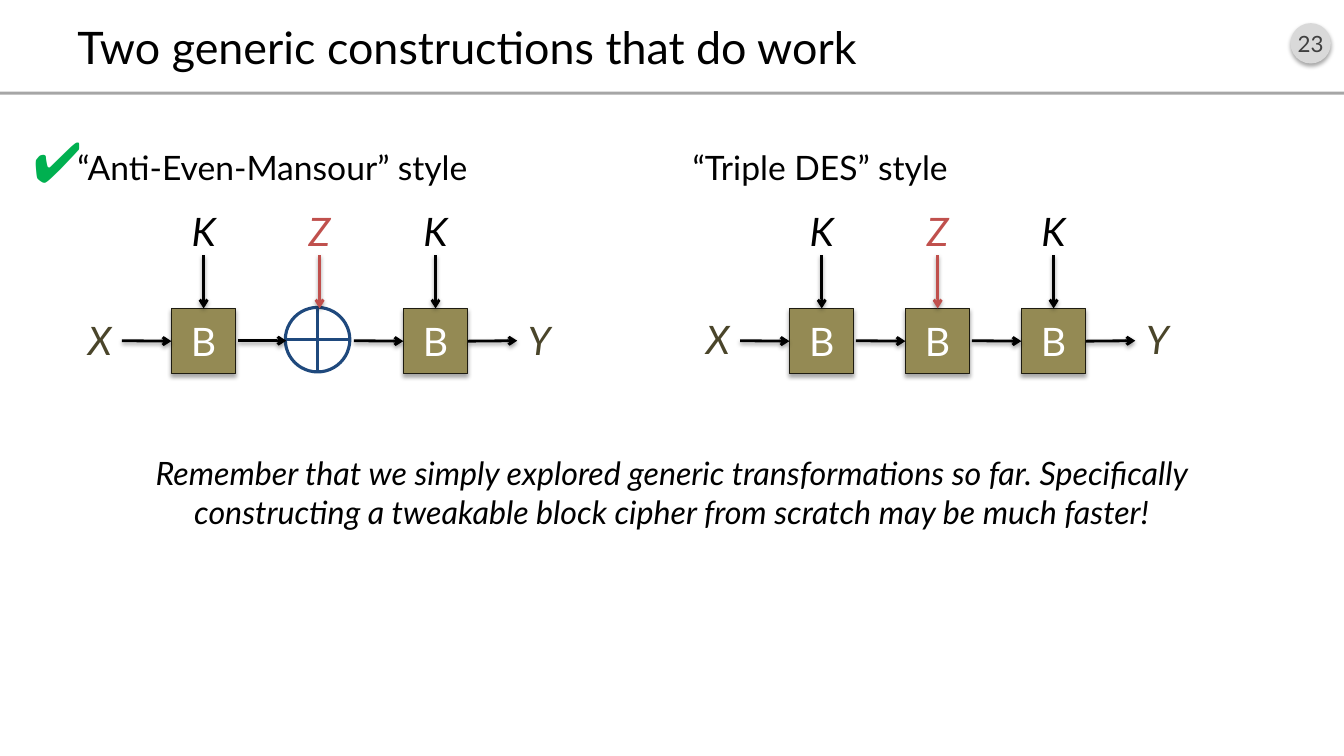
from lxml.etree import SubElement
from pptx import Presentation
from pptx.dml.color import RGBColor
from pptx.enum.shapes import MSO_CONNECTOR, MSO_SHAPE as SHAPE
from pptx.enum.text import MSO_ANCHOR as ANCHOR, MSO_AUTO_SIZE as AUTO, PP_ALIGN as ALIGN
from pptx.oxml.ns import qn
from pptx.util import Emu, Pt

PX = 9144  # 100 px to the inch
BLACK, WHITE, RED, OLIVE = "000000", "FFFFFF", "C0504D", "4A452A"
BLUE, GREEN, BOX_FILL, BOX_EDGE = "1F497D", "00B050", "948A54", "1E1C11"
TOP, LEFT, BOTTOM, RIGHT = range(4)


def px(value):
    return Emu(int(value * PX))


def color(value):
    return RGBColor.from_string(value)


def apply(target, values):
    for name, value in values.items():
        setattr(target, name, value)


class SlideBuilder:
    font = "Lato"

    def __init__(self, slide):
        self.slide = slide
        self.canvas = slide.shapes

    def start_group(self):
        self.canvas = self.slide.shapes.add_group_shape().shapes

    def end_group(self):
        self.canvas = self.slide.shapes

    def shadow(self, effects, alpha, distance):
        outer = SubElement(effects, qn("a:outerShdw"), blurRad=str(Pt(3.1)),
                           dist=str(Pt(distance)), dir="5400000", rotWithShape="0")
        tint = SubElement(outer, qn("a:srgbClr"), val=BLACK)
        SubElement(tint, qn("a:alpha"), val=str(alpha * 1000))

    def fill_text(self, shape, text, size, ink, italic=False, align=ALIGN.LEFT,
                  before=0, **frame_format):
        frame = shape.text_frame
        apply(frame, {"word_wrap": True, **frame_format})
        paragraph = frame.paragraphs[0]
        apply(paragraph, {"alignment": align, "space_before": Pt(before)})
        run = paragraph.add_run()
        run.text = text
        apply(run.font, {"name": self.font, "size": Pt(size), "italic": italic})
        run.font.color.rgb = color(ink)

    def text(self, left, top, width, height, text, size, ink=BLACK, **style):
        box = self.canvas.add_textbox(px(left), px(top), px(width), px(height))
        self.fill_text(box, text, size, ink, **style)

    def label(self, left, top, text, ink):
        self.text(left, top, 64, 47, text, 28, ink, italic=True, align=ALIGN.CENTER,
                  auto_size=AUTO.SHAPE_TO_FIT_TEXT, margin_left=0, margin_right=0,
                  margin_top=0, margin_bottom=0)

    def shape(self, kind, left, top, width, height, fill=None, edge=None,
              weight=0.75, shadow=False):
        shape = self.canvas.add_shape(kind, px(left), px(top), px(width), px(height))
        shape.shadow.inherit = False
        if fill:
            shape.fill.solid()
            shape.fill.fore_color.rgb = color(fill)
        else:
            shape.fill.background()
        if edge:
            shape.line.color.rgb = color(edge)
            shape.line.width = Pt(weight)
        else:
            shape.line.fill.background()
        if shadow:
            self.shadow(shape._element.spPr.find(qn("a:effectLst")), 35, 1.8)
        return shape

    def caption(self, shape, text, size, ink):
        self.fill_text(shape, text, size, ink, align=ALIGN.CENTER,
                       vertical_anchor=ANCHOR.MIDDLE, margin_left=0, margin_right=0)

    def line(self, start, end, ink=BLACK, weight=2, arrow=True, source=None, target=None):
        connector = self.canvas.add_connector(
            MSO_CONNECTOR.STRAIGHT, *(px(value) for value in (*start, *end)))
        if source:
            connector.begin_connect(*source)
        if target:
            connector.end_connect(*target)
        connector.line.color.rgb = color(ink)
        connector.line.width = Pt(weight)
        properties = connector._element.spPr
        effects = SubElement(properties, qn("a:effectLst"))
        if arrow:
            SubElement(properties.find(qn("a:ln")), qn("a:tailEnd"), type="arrow")
            self.shadow(effects, 38, 1.6)

    def cipher_box(self, left):
        box = self.shape(SHAPE.RECTANGLE, left, 306, 64, 65, BOX_FILL, BOX_EDGE, shadow=True)
        self.caption(box, "B", 28, WHITE)
        return box

    def xor(self, left, top=305, size=64):
        half = size // 2
        self.shape(SHAPE.OVAL, left, top, size, size, edge=BLUE, weight=2.25)
        self.line((left, top + half), (left + size, top + half), BLUE, 2.25, arrow=False)
        self.line((left + half, top), (left + half, top + size), BLUE, 2.25, arrow=False)

    def diagram(self, origin, label_top, kinds):
        """One chain X -> stage -> stage -> stage -> Y, each stage fed from above."""
        lane, reach, step = 338, 49, 115
        self.start_group()
        self.label(origin, label_top, "X", OLIVE)
        for index, (kind, key) in enumerate(zip(kinds, "KZK")):
            left = origin + 103 + index * step
            ink = RED if key == "Z" else BLACK
            box = self.cipher_box(left) if kind == "B" else self.xor(left - 2)
            self.label(left, 206, key, ink)
            self.line((left + 32, 253), (left + 32, 306), ink, target=box and (box, TOP))
            self.line((left - reach, lane), (left - 1, lane), target=box and (box, LEFT))
        end = left + 64
        self.line((end, lane), (end + reach, lane), source=(box, RIGHT))
        self.label(origin + 436, label_top, "Y", OLIVE)
        self.end_group()


def main():
    presentation = Presentation()
    apply(presentation, {"slide_width": px(1333), "slide_height": px(750)})
    builder = SlideBuilder(presentation.slides.add_slide(presentation.slide_layouts[6]))

    # Header: page number, rule and title
    badge = builder.shape(SHAPE.OVAL, 1280, 23, 40, 40, "D9D9D9", shadow=True)
    builder.caption(badge, "23", 16, "404040")
    builder.shape(SHAPE.RECTANGLE, 0, 91, 1333, 3, "A6A6A6")
    builder.text(67, 16, 1200, 60, "Two generic constructions that do work", 32,
                 vertical_anchor=ANCHOR.MIDDLE)

    # Two constructions, each with heading and diagram
    for heading_left, heading, origin, label_top, kinds in (
            (67, "“Anti-Even-Mansour” style", 67, 314, "B+B"),
            (677, "“Triple DES” style", 680, 313, "BBB")):
        builder.text(heading_left, 121, 589, 70, heading, 24, before=8,
                     vertical_anchor=ANCHOR.BOTTOM)
        builder.diagram(origin, label_top, kinds)

    # Closing remark and check mark
    builder.text(67, 445, 1200, 250,
                 "Remember that we simply explored generic transformations so far. "
                 "Specifically constructing a tweakable block cipher from scratch "
                 "may be much faster!", 23, italic=True, align=ALIGN.CENTER, before=8)
    builder.text(23, 121, 65, 77, "✔", 40, GREEN, word_wrap=False,
                 auto_size=AUTO.SHAPE_TO_FIT_TEXT)

    presentation.save("out.pptx")


if __name__ == "__main__":
    main()
